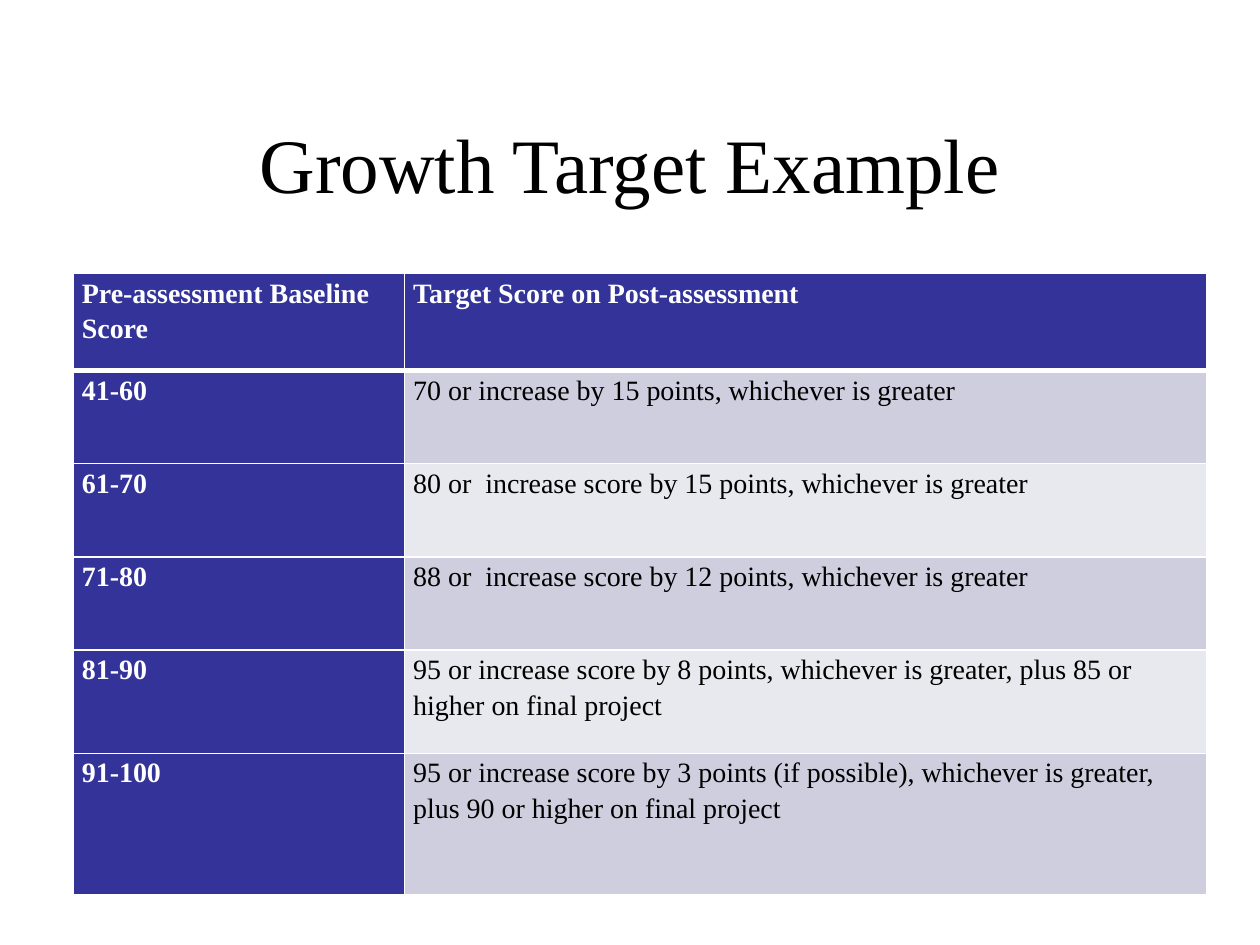
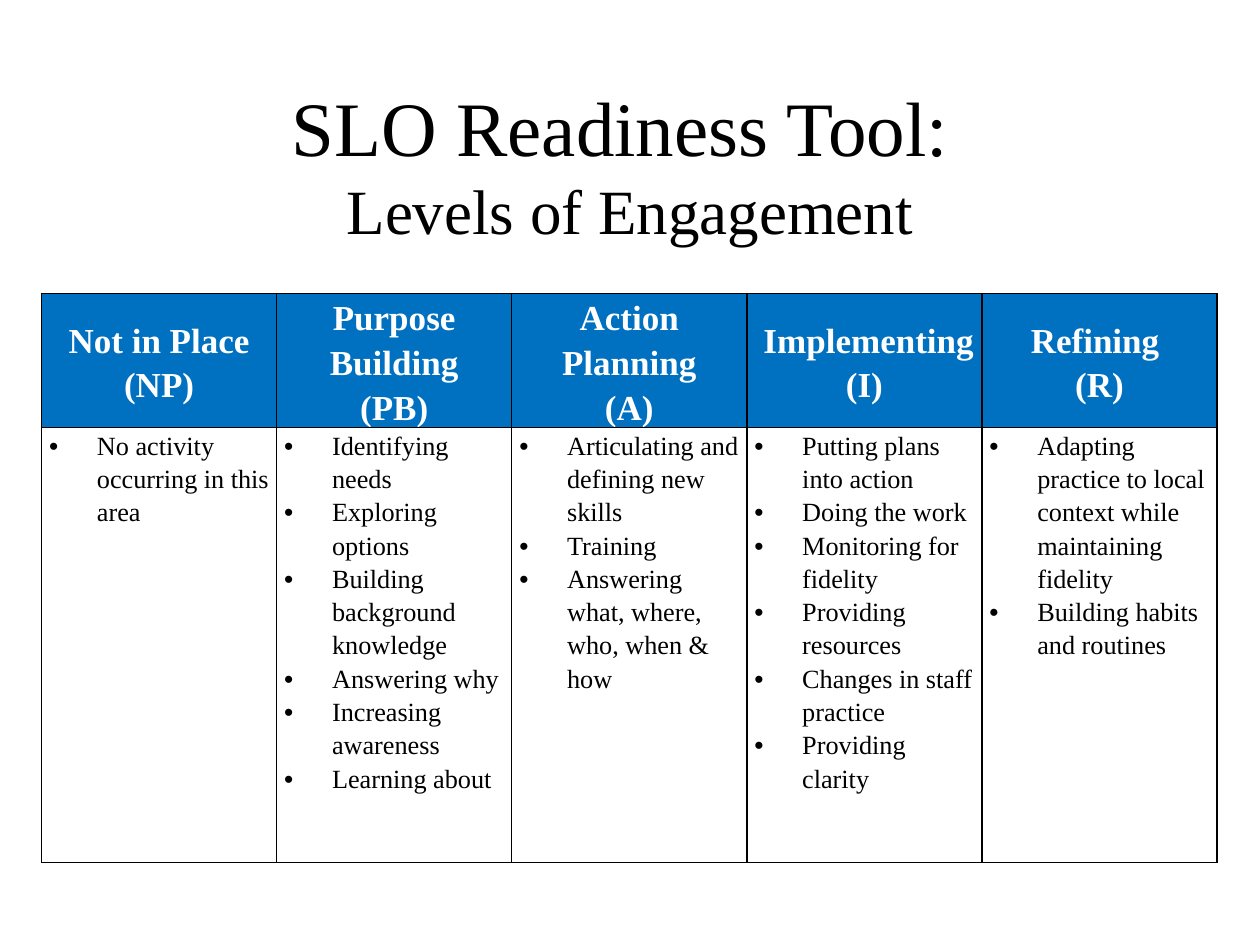
from lxml.etree import SubElement
from pptx import Presentation
from pptx.dml.color import RGBColor
from pptx.enum.text import MSO_ANCHOR, MSO_AUTO_SIZE, PP_ALIGN
from pptx.oxml import parse_xml
from pptx.oxml.ns import nsdecls, qn
from pptx.util import Inches, Pt

FONT = "Times New Roman"
BLACK, WHITE = "000000", "FFFFFF"
INDIGO, BLUE = "333399", "0070C0"
BANDS = ["CECEDE", "E8E8EF"]
TITLE_BOX = (0.75, 0.67, 8.5, 1.25)
LINE_SPACING = 1.15
BULLET_INDENT = 0.38

TARGETS = [
    ("Pre-assessment Baseline Score", "Target Score on Post-assessment"),
    ("41-60", "70 or increase by 15 points, whichever is greater"),
    ("61-70", "80 or  increase score by 15 points, whichever is greater"),
    ("71-80", "88 or  increase score by 12 points, whichever is greater"),
    ("81-90", "95 or increase score by 8 points, whichever is greater, "
              "plus 85 or higher on final project"),
    ("91-100", "95 or increase score by 3 points (if possible), whichever is "
               "greater, plus 90 or higher on final project"),
]

LEVELS = [
    ("Not in Place\v(NP)", ["No activity occurring in this area"]),
    ("Purpose Building\v(PB)", [
        "Identifying needs", "Exploring options",
        "Building background knowledge", "Answering why",
        "Increasing awareness", "Learning about"]),
    ("Action Planning\v(A)", [
        "Articulating and defining new skills", "Training",
        "Answering what, where, who, when & how"]),
    (" Implementing\v(I)", [
        "Putting plans into action", "Doing the work",
        "Monitoring for fidelity", "Providing resources",
        "Changes in staff practice", "Providing clarity"]),
    ("Refining \n(R)", [
        "Adapting practice to local context while maintaining fidelity",
        "Building habits and routines"]),
]


def rgb(value):
    return RGBColor.from_string(value)


def style_runs(paragraph, size, color, bold=False):
    for run in paragraph.runs:
        run.font.name = FONT
        run.font.size = Pt(size)
        run.font.bold = bold
        run.font.color.rgb = rgb(color)


def add_titled_slide(prs, title, sizes):
    slide = prs.slides.add_slide(prs.slide_layouts[5])
    heading = slide.shapes.title
    heading.left, heading.top, heading.width, heading.height = map(Inches, TITLE_BOX)
    frame = heading.text_frame
    frame.text = title
    frame.auto_size = MSO_AUTO_SIZE.NONE
    frame.vertical_anchor = MSO_ANCHOR.MIDDLE
    paragraph = frame.paragraphs[0]
    paragraph.alignment = PP_ALIGN.CENTER
    style_runs(paragraph, sizes[0], BLACK)
    for run, size in zip(paragraph.runs, sizes):
        run.font.size = Pt(size)
    return slide


def add_grid(slide, box, widths, heights):
    frame = slide.shapes.add_table(len(heights), len(widths), *map(Inches, box))
    table = frame.table
    table.first_row = table.horz_banding = False
    for column, width in zip(table.columns, widths):
        column.width = Inches(width)
    for row, height in zip(table.rows, heights):
        row.height = Inches(height)
    return table


def fill_cell(cell, text, size, color, fill=None, bold=False, inset=0.07,
              align=PP_ALIGN.LEFT):
    cell.text = text
    cell.margin_left = cell.margin_right = Inches(inset)
    cell.margin_top = cell.margin_bottom = 0
    if fill:
        cell.fill.solid()
        cell.fill.fore_color.rgb = rgb(fill)
    else:
        cell.fill.background()
    for paragraph in cell.text_frame.paragraphs:
        paragraph.alignment = align
        paragraph.line_spacing = LINE_SPACING
        style_runs(paragraph, size, color, bold)


def set_borders(cell, color, top=1, bottom=1):
    properties = cell._tc.get_or_add_tcPr()
    for index, (side, width) in enumerate(
            [("L", 1), ("R", 1), ("T", top), ("B", bottom)]):
        properties.insert(index, parse_xml(
            f'<a:ln{side} {nsdecls("a")} w="{Pt(width)}"><a:solidFill>'
            f'<a:srgbClr val="{color}"/></a:solidFill></a:ln{side}>'))


def add_bullets(cell):
    indent = Inches(BULLET_INDENT)
    for paragraph in cell.text_frame.paragraphs:
        properties = paragraph._p.get_or_add_pPr()
        properties.set("marL", str(indent))
        properties.set("indent", str(-indent))
        SubElement(properties, qn("a:buFont"), typeface="Arial")
        SubElement(properties, qn("a:buChar"), char="•")


def add_target_table(slide, box):
    widths = [2.63, box[2] - 2.63]
    heights = [0.77, 0.74, 0.74, 0.74, 0.82, 1.12]
    table = add_grid(slide, box, widths, heights)
    for r, texts in enumerate(TARGETS):
        for c, text in enumerate(texts):
            cell = table.cell(r, c)
            if r == 0 or c == 0:
                fill_cell(cell, text, 16, WHITE, INDIGO, bold=True)
            else:
                fill_cell(cell, text, 16, BLACK, BANDS[(r - 1) % 2])
            set_borders(cell, WHITE, top=3 if r == 1 else 1,
                        bottom=3 if r == 0 else 1)


def add_level_table(slide, box):
    widths = [box[2] / len(LEVELS)] * len(LEVELS)
    table = add_grid(slide, box, widths, [0.88, 3.45])
    for c, (level, activities) in enumerate(LEVELS):
        header, body = table.cell(0, c), table.cell(1, c)
        fill_cell(header, level, 20, WHITE, BLUE, bold=True, inset=0.06,
                  align=PP_ALIGN.CENTER)
        header.vertical_anchor = MSO_ANCHOR.MIDDLE
        fill_cell(body, "\n".join(activities), 15, BLACK, inset=0.06)
        add_bullets(body)
        for cell in (header, body):
            set_borders(cell, BLACK)


def main():
    prs = Presentation()
    prs.slide_width, prs.slide_height = Inches(10), Inches(7.5)
    growth = add_titled_slide(prs, "Growth Target Example", [44])
    add_target_table(growth, (0.58, 2.17, 9, 4.92))
    readiness = add_titled_slide(
        prs, "SLO Readiness Tool: \vLevels of Engagement", [44, 36])
    add_level_table(readiness, (0.33, 2.33, 9.33, 4.6))
    prs.save("out.pptx")


if __name__ == "__main__":
    main()
